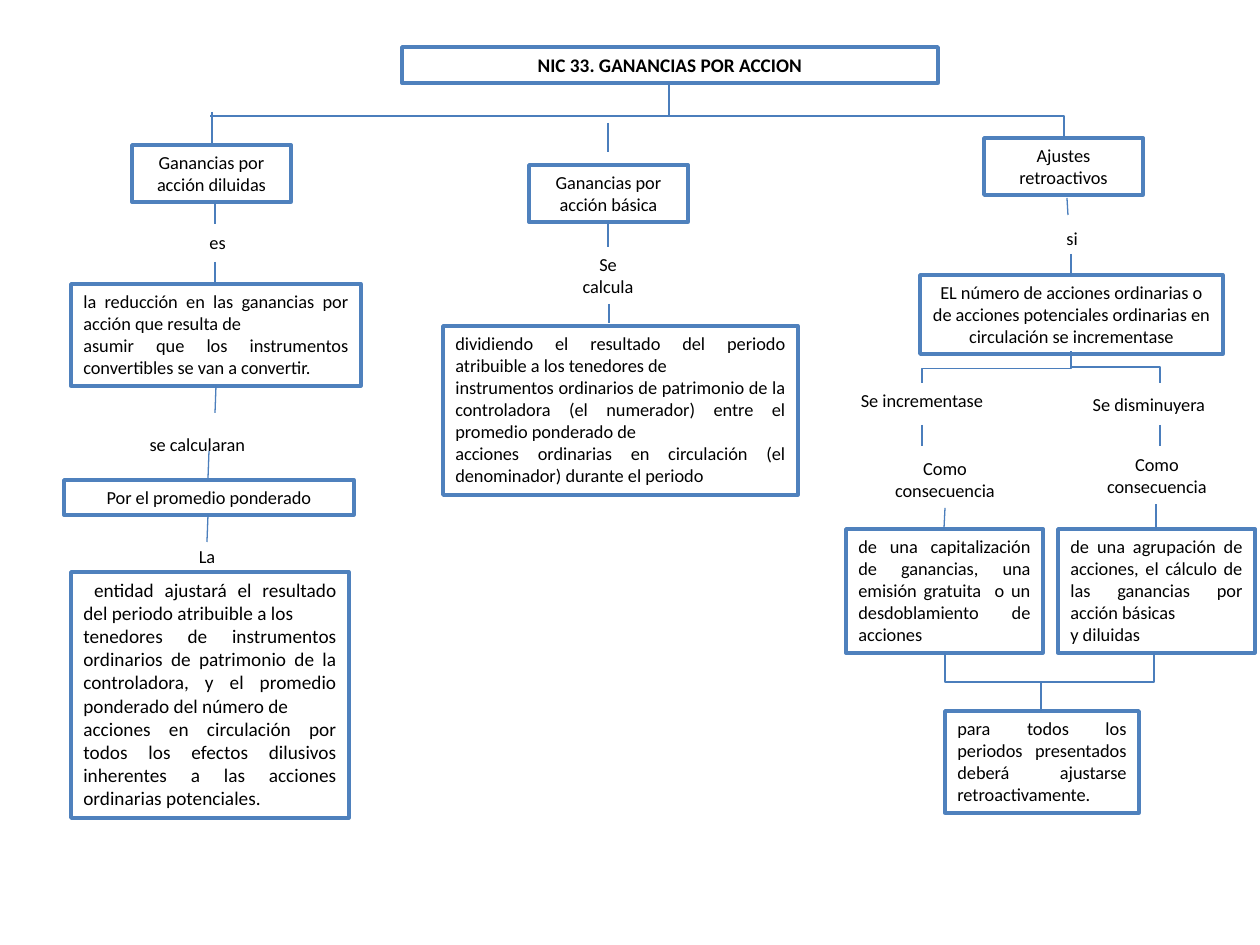
import pptx
import pptx.dml.color
import pptx.enum.shapes
import pptx.enum.text
import pptx.oxml.ns
import pptx.util
import lxml.etree

SCALE = 914400 / 126
FONT = "Calibri"
SIZE = 10.5
COLORS = {"paper": "FFFFFF", "edge": "4F81BD", "link": "4B7EBC", "ink": "000000"}
ALIGN = pptx.enum.text.PP_ALIGN
FIT = pptx.enum.text.MSO_AUTO_SIZE
KIND = pptx.enum.shapes.MSO_CONNECTOR

# left, top, width, height, alignment, paragraphs, text size
BOXES = [
    (132, 145, 159, 57, ALIGN.CENTER, ["Ganancias por acción diluidas"], SIZE),
    (529, 165, 159, 57, ALIGN.CENTER, ["Ganancias por acción básica"], SIZE),
    (984, 138, 159, 57, ALIGN.CENTER, ["Ajustes retroactivos"], SIZE),
    (71, 284, 290, 102, ALIGN.JUSTIFY, [
        "la reducción en las ganancias por acción que resulta de",
        "asumir que los instrumentos convertibles se van a convertir."], SIZE),
    (64, 480, 290, 35, ALIGN.CENTER, ["Por el promedio ponderado"], SIZE),
    (71, 572, 278, 246, ALIGN.JUSTIFY, [
        " entidad ajustará el resultado del periodo atribuible a los",
        "tenedores de instrumentos ordinarios de patrimonio de la controladora, "
        "y el promedio ponderado del número de",
        "acciones en circulación por todos los efectos dilusivos inherentes "
        "a las acciones ordinarias potenciales."], 11),
    (443, 326, 355, 169, ALIGN.JUSTIFY, [
        "dividiendo el resultado del periodo atribuible a los tenedores de",
        "instrumentos ordinarios de patrimonio de la controladora (el numerador) "
        "entre el promedio ponderado de",
        "acciones ordinarias en circulación (el denominador) durante el periodo"], SIZE),
    (920, 275, 303, 79, ALIGN.CENTER, [
        "EL número de acciones ordinarias o de acciones potenciales ordinarias "
        "en circulación se incrementase"], SIZE),
    (846, 529, 197, 124, ALIGN.JUSTIFY, [
        "de una capitalización de ganancias, una emisión gratuita  o un "
        "desdoblamiento de acciones"], SIZE),
    (1058, 529, 197, 124, ALIGN.JUSTIFY, [
        "de una agrupación de acciones, el cálculo de las ganancias por acción básicas",
        "y diluidas"], SIZE),
    (945, 711, 194, 102, ALIGN.JUSTIFY, [
        "para todos los periodos presentados deberá ajustarse retroactivamente."], SIZE),
]

# left, top, width, height, text
LABELS = [
    (122, 539, 170, 35, "La"),
    (562, 247, 92, 57, "Se calcula"),
    (845, 383, 154, 35, "Se incrementase"),
    (1072, 387, 154, 35, "Se disminuyera"),
    (868, 451, 154, 57, "Como consecuencia"),
    (1080, 447, 154, 57, "Como consecuencia"),
]

# labels that open with a taller blank
LEADS = [
    (190, 212, 52, 50, "es"),
    (130, 414, 170, 50, "se calcularan"),
    (1047, 208, 52, 50, "si"),
]

# x and y of both ends
LINES = [
    (212, 112, 212, 143), (608, 123, 608, 152), (1064, 116, 1064, 138),
    (215, 203, 215, 224), (215, 262, 215, 284), (216, 386, 215, 413),
    (209, 451, 208, 478), (208, 515, 207, 542),
    (608, 222, 608, 247), (609, 304, 609, 323),
    (1067, 198, 1068, 215), (1071, 254, 1071, 276),
    (922, 425, 922, 446), (1160, 425, 1160, 446),
    (945, 508, 944, 529), (1156, 504, 1156, 529),
]

# upper end, lower end, share of the drop before the turn
BENDS = [
    (669, 83, 210, 116, 1), (669, 83, 1064, 138, 0.6),
    (1071, 354, 922, 383, 0.5), (1071, 351, 1160, 383, 0.5),
    (945, 653, 1041, 711, 0.5), (1154, 653, 1041, 682, 1),
]


def px(num):
    return pptx.util.Emu(round(num * SCALE))


def tint(name):
    return pptx.dml.color.RGBColor.from_string(COLORS[name])


def add_run(par, text, size=SIZE, bold=False):
    run = par.add_run()
    run.text = text
    run.font.name = FONT
    run.font.size = pptx.util.Pt(size)
    run.font.bold = bold
    run.font.color.rgb = tint("ink")


def set_frame(frame, fit=FIT.SHAPE_TO_FIT_TEXT):
    frame.word_wrap = True
    frame.auto_size = fit
    frame.vertical_anchor = pptx.enum.text.MSO_ANCHOR.TOP
    frame.margin_left = frame.margin_right = pptx.util.Inches(0.1)
    frame.margin_top = frame.margin_bottom = pptx.util.Inches(0.05)


def set_look(shape):
    shape.fill.solid()
    shape.fill.fore_color.rgb = tint("paper")
    shape.line.color.rgb = tint("edge")
    shape.line.width = pptx.util.Pt(2)


def set_title(slide):
    title = slide.shapes.title
    title.left, title.top, title.width, title.height = map(px, (402, 47, 536, 36))
    set_look(title)
    set_frame(title.text_frame, FIT.NONE)
    par = title.text_frame.paragraphs[0]
    par.alignment = ALIGN.CENTER
    add_run(par, "NIC 33. GANANCIAS POR ACCION", 11, True)


def add_box(slide, left, top, wide, high, align, texts, size):
    rect = pptx.enum.shapes.MSO_SHAPE.RECTANGLE
    box = slide.shapes.add_shape(rect, *map(px, (left, top, wide, high)))
    box.shadow.inherit = False
    set_look(box)
    frame = box.text_frame
    set_frame(frame)
    for pos, text in enumerate(texts):
        par = frame.add_paragraph() if pos else frame.paragraphs[0]
        par.alignment = align
        add_run(par, text, size)


def add_label(slide, left, top, wide, high, text, lead=False):
    label = slide.shapes.add_textbox(*map(px, (left, top, wide, high)))
    set_frame(label.text_frame)
    par = label.text_frame.paragraphs[0]
    par.alignment = ALIGN.LEFT if lead else ALIGN.CENTER
    if lead:
        add_run(par, " ", 18)
    add_run(par, text)


def add_line(slide, x1, y1, x2, y2, kind=KIND.STRAIGHT):
    line = slide.shapes.add_connector(kind, *map(px, (x1, y1, x2, y2)))
    line.line.color.rgb = tint("link")
    line.line.width = pptx.util.Pt(0.75)
    lxml.etree.SubElement(line._element.spPr, pptx.oxml.ns.qn("a:effectLst"))
    return line


def add_bend(slide, x1, y1, x2, y2, turn):
    """Go down, across and down: an elbow laid flat, then turned by 90 degrees."""
    mid_x, mid_y = (x1 + x2) / 2, (y1 + y2) / 2
    half_w, half_h = (y2 - y1) / 2, (x2 - x1) / 2
    bend = add_line(slide, mid_x - half_w, mid_y + half_h,
                    mid_x + half_w, mid_y - half_h, KIND.ELBOW)
    props = bend._element.spPr
    props.find(pptx.oxml.ns.qn("a:xfrm")).set("rot", str(90 * 60000))
    geom = props.find(pptx.oxml.ns.qn("a:prstGeom"))
    guide = lxml.etree.SubElement(geom.find(pptx.oxml.ns.qn("a:avLst")),
                                  pptx.oxml.ns.qn("a:gd"))
    guide.set("name", "adj1")
    guide.set("fmla", f"val {round(turn * 100000)}")


def main():
    deck = pptx.Presentation()
    deck.slide_width, deck.slide_height = px(1260), px(945)
    slide = deck.slides.add_slide(deck.slide_layouts[5])
    set_title(slide)
    for box in BOXES:
        add_box(slide, *box)
    for label in LABELS:
        add_label(slide, *label)
    for label in LEADS:
        add_label(slide, *label, lead=True)
    for line in LINES:
        add_line(slide, *line)
    for bend in BENDS:
        add_bend(slide, *bend)
    deck.save("out.pptx")


if __name__ == "__main__":
    main()
